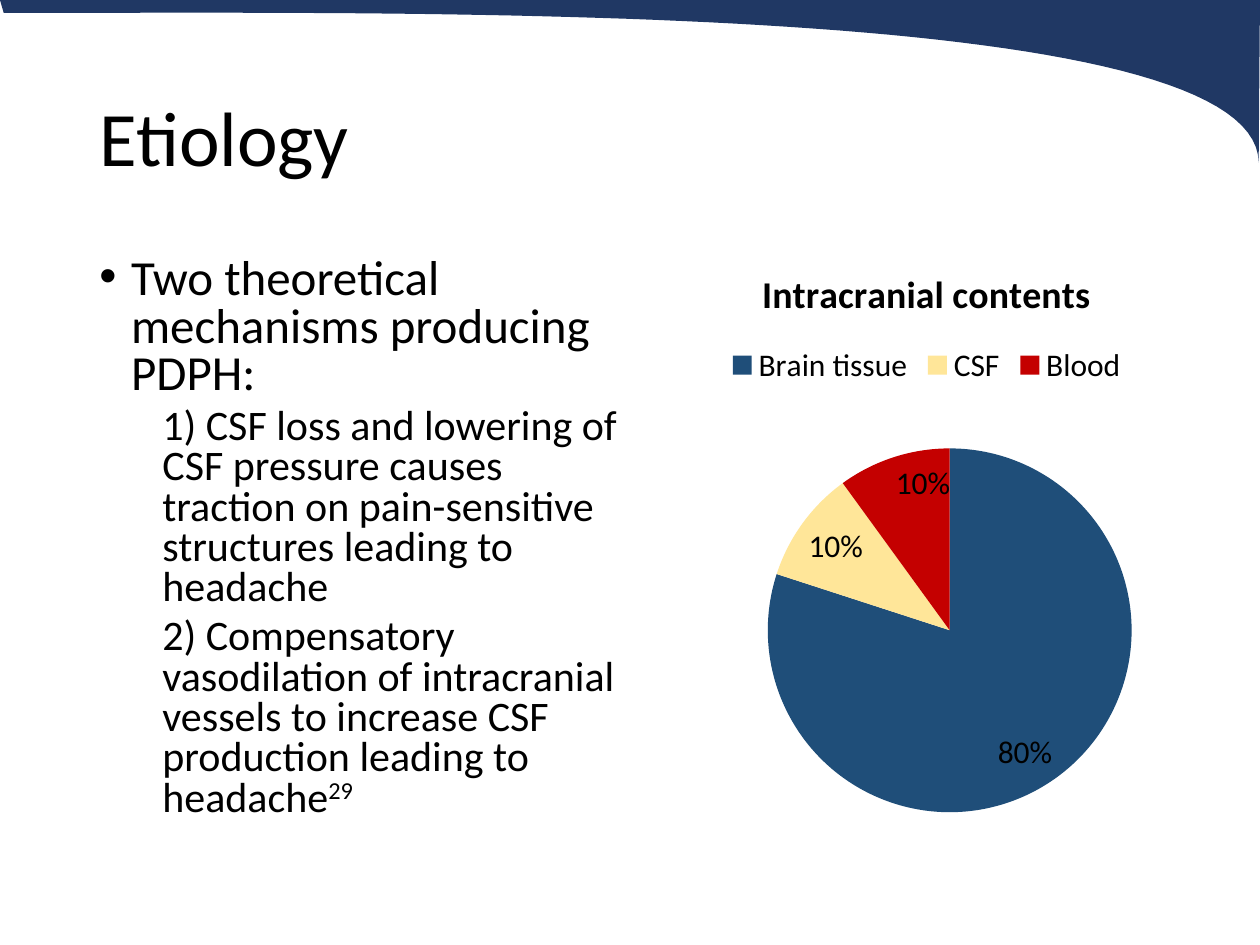
import pptx
import pptx.chart.data
import pptx.dml.color
import pptx.enum.chart
import pptx.enum.text
import pptx.oxml
import pptx.oxml.ns
import pptx.util
from pptx.util import Cm

NAVY = pptx.dml.color.RGBColor(0x20, 0x38, 0x64)
BLACK = pptx.dml.color.RGBColor(0, 0, 0)
BLUE = pptx.dml.color.RGBColor(0x1F, 0x4E, 0x79)
CREAM = pptx.dml.color.RGBColor(0xFF, 0xE6, 0x99)
RED = pptx.dml.color.RGBColor(0xC4, 0, 0)
FONT = "Calibri"

MECHANISMS = [
    ("1) CSF loss and lowering of CSF pressure causes traction on "
     "pain-sensitive structures leading to headache", ""),
    ("2) Compensatory vasodilation of intracranial vessels to increase "
     "CSF production leading to headache", "29"),
]
CONTENTS = [("Brain tissue", 80, BLUE), ("CSF", 10, CREAM), ("Blood", 10, RED)]


def style_font(font, size, bold=False):
    font.name = FONT
    font.size = pptx.util.Pt(size)
    font.bold = bold
    font.color.rgb = BLACK


def place(shape, box):
    shape.left, shape.top, shape.width, shape.height = box


def curve_point(start, first, second, end, t):
    weights = ((1 - t) ** 3, 3 * t * (1 - t) ** 2, 3 * t * t * (1 - t), t ** 3)
    points = (start, first, second, end)
    return tuple(sum(w * p[axis] for w, p in zip(weights, points)) for axis in (0, 1))


def add_wave(page, box):
    left, top, width, height = box
    steps = 60
    curve = [curve_point((0.999, 1), (0.998, 0), (0.336, 0.08), (0.003, 0.08), step / steps)
             for step in range(steps + 1)]
    outline = [(left + x * width, top + y * height) for x, y in [(1, 0)] + curve]
    builder = page.shapes.build_freeform(left, top)
    builder.add_line_segments(outline, close=True)
    wave = builder.convert_to_shape()
    wave.shadow.inherit = False
    wave.fill.solid()
    wave.fill.fore_color.rgb = NAVY
    wave.line.fill.background()


def fill_title(title, box):
    place(title, box)
    frame = title.text_frame
    frame.auto_size = pptx.enum.text.MSO_AUTO_SIZE.NONE
    frame.vertical_anchor = pptx.enum.text.MSO_ANCHOR.MIDDLE
    para = frame.paragraphs[0]
    para.text = "Etiology"
    para.alignment = pptx.enum.text.PP_ALIGN.LEFT
    para.line_spacing = 0.9
    style_font(para.font, 44)


def format_item(para, size, margin, indent, bullet, space):
    properties = para._p.get_or_add_pPr()
    properties.set("marL", str(margin))
    properties.set("indent", str(indent))
    para.line_spacing = 0.8
    para.space_before = pptx.util.Pt(space)
    mark = pptx.oxml.ns.qn("a:buChar" if bullet else "a:buNone")
    element = properties.makeelement(mark, {"char": bullet} if bullet else {})
    properties.append(element)
    style_font(para.font, size)


def fill_body(body, box):
    place(body, box)
    frame = body.text_frame
    frame.auto_size = pptx.enum.text.MSO_AUTO_SIZE.NONE
    lead = frame.paragraphs[0]
    lead.text = "Two theoretical mechanisms producing PDPH:"
    format_item(lead, 28, Cm(0.64), Cm(-0.64), "•", 0)
    for text, reference in MECHANISMS:
        para = frame.add_paragraph()
        para.level = 1
        para.add_run().text = text
        format_item(para, 24, Cm(1.27), Cm(0), "", 5)
        if reference:
            span = para.add_run()
            span.text = reference
            span._r.get_or_add_rPr().set("baseline", "30000")


def set_plot_area(chart, x, y, w, h):
    area = chart._chartSpace.chart.plotArea
    for old in area.findall(pptx.oxml.ns.qn("c:layout")):
        area.remove(old)
    parts = "".join(f'<c:{tag} val="{value}"/>' for tag, value in (
        ("layoutTarget", "inner"), ("xMode", "edge"), ("yMode", "edge"),
        ("x", x), ("y", y), ("w", w), ("h", h)))
    area.insert(0, pptx.oxml.parse_xml(
        f'<c:layout {pptx.oxml.ns.nsdecls("c")}><c:manualLayout>{parts}'
        '</c:manualLayout></c:layout>'))


def add_contents_chart(page, box):
    title = "Intracranial contents"
    data = pptx.chart.data.CategoryChartData()
    data.categories = [name for name, _, _ in CONTENTS]
    data.add_series(title, [value for _, value, _ in CONTENTS])
    chart = page.shapes.add_chart(pptx.enum.chart.XL_CHART_TYPE.PIE, *box, data).chart
    style_font(chart.font, 18)
    chart.has_title = True
    heading = chart.chart_title.text_frame.paragraphs[0]
    heading.text = title
    style_font(heading.font, 21.6, bold=True)
    chart.has_legend = True
    chart.legend.position = pptx.enum.chart.XL_LEGEND_POSITION.TOP
    chart.legend.include_in_layout = False
    style_font(chart.legend.font, 18)
    plot = chart.plots[0]
    plot.vary_by_categories = True
    for index, (_, _, color) in enumerate(CONTENTS):
        fill = plot.series[0].points[index].format.fill
        fill.solid()
        fill.fore_color.rgb = color
    labels = plot.series[0].data_labels
    labels.show_percentage = True
    labels.show_value = False
    labels.number_format = "0%"
    labels.number_format_is_linked = False
    labels.position = pptx.enum.chart.XL_LABEL_POSITION.INSIDE_END
    style_font(labels.font, 18)
    set_plot_area(chart, 0.26, 0.35, 0.55, 0.62)


def main():
    deck = pptx.Presentation()
    deck.slide_width, deck.slide_height = Cm(25.4), Cm(19.05)
    page = deck.slides.add_slide(deck.slide_layouts[1])
    add_wave(page, (Cm(0), Cm(0), deck.slide_width, Cm(3.28)))
    fill_title(page.shapes.title, (Cm(1.75), Cm(1.02), Cm(21.89), Cm(3.68)))
    fill_body(page.placeholders[1], (Cm(1.75), Cm(5.08), Cm(10.95), Cm(12.09)))
    add_contents_chart(page, (Cm(12.01), Cm(4.88), Cm(13.34), Cm(11.86)))
    deck.save("out.pptx")


if __name__ == "__main__":
    main()
